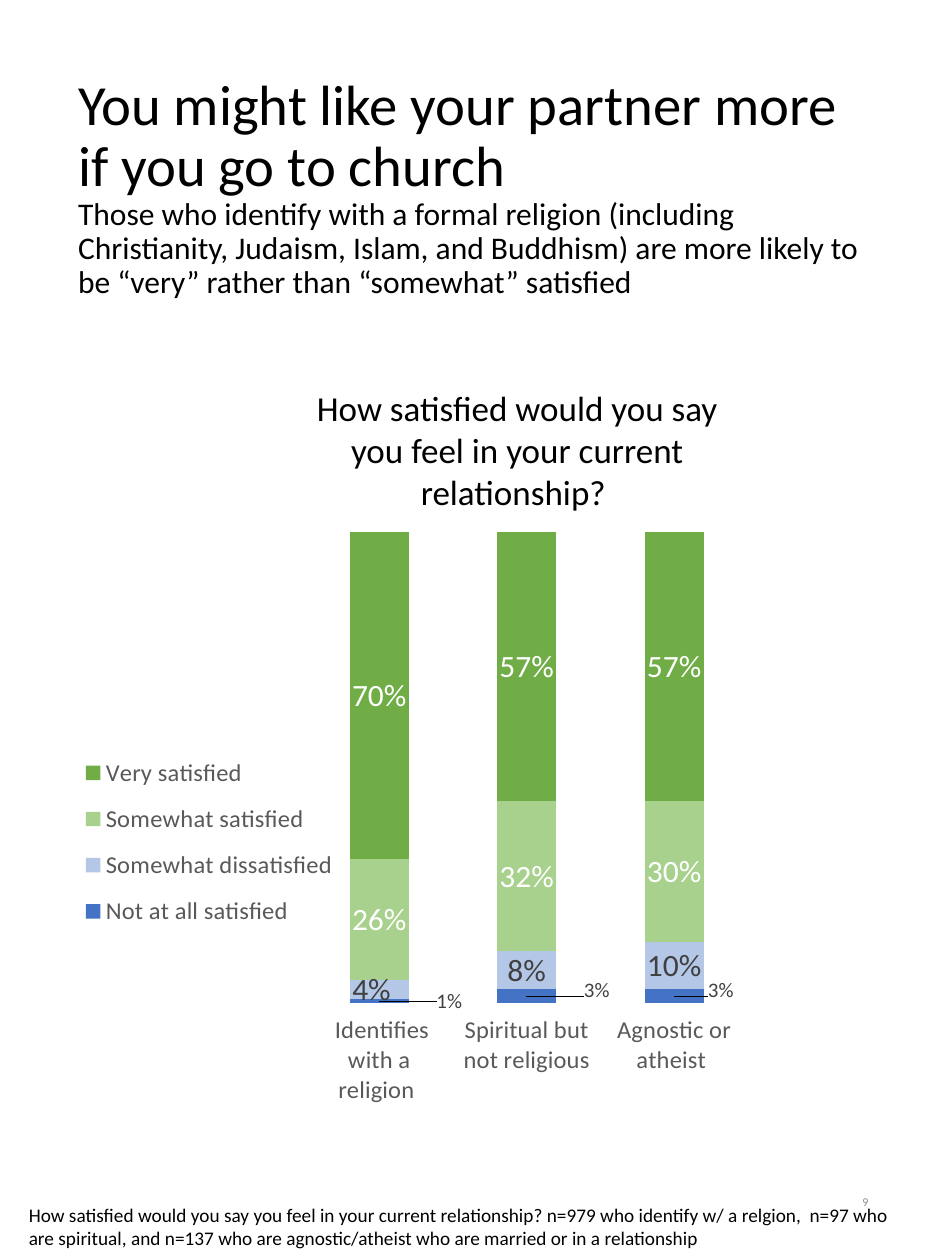
import pptx
import pptx.util
import pptx.chart.data
import pptx.dml.color
import pptx.enum.chart
import pptx.enum.text
import pptx.oxml
import pptx.oxml.ns

WIDTH, HEIGHT = 7.5, 10
FONT = "Calibri"
ALIGN = pptx.enum.text.PP_ALIGN
ANCHOR = pptx.enum.text.MSO_ANCHOR

QUESTION = "How satisfied would you say you feel in your current relationship?"
GROUPS = [" Identifies with a religion ", "Spiritual but not religious", "Agnostic or atheist "]
ANSWERS = [
    ("Not at all satisfied", (0.01, 0.03, 0.03), "4472C4", 12, "404040"),
    ("Somewhat dissatisfied", (0.04, 0.08, 0.1), "B4C7E7", 18, "404040"),
    ("Somewhat satisfied", (0.26, 0.32, 0.3), "A9D18E", 18, "FFFFFF"),
    ("Very satisfied", (0.7, 0.57, 0.57), "70AD47", 18, "FFFFFF"),
]
LABEL_SHIFTS = {
    (0, 0): (0.09, 0),
    (0, 1): (0.09, -0.01),
    (0, 2): (0.06, -0.01),
    (1, 0): (-0.01, 0),
}


def color(value):
    return pptx.dml.color.RGBColor.from_string(value)


def frame(left, top, width, height):
    column, row = WIDTH / 100, HEIGHT / 100
    return [pptx.util.Inches(n) for n in (left * column, top * row, width * column, height * row)]


def style(font, size, shade):
    font.name = FONT
    font.size = pptx.util.Pt(size)
    font.color.rgb = color(shade)


def add_heading(slide, headline, summary, area):
    heading = slide.shapes.title
    heading.left, heading.top, heading.width, heading.height = area
    text = heading.text_frame
    text.auto_size = pptx.enum.text.MSO_AUTO_SIZE.NONE
    text.vertical_anchor = ANCHOR.MIDDLE
    paragraph = text.paragraphs[0]
    paragraph.alignment = ALIGN.LEFT
    paragraph.line_spacing = 0.9
    paragraph.add_run().text = headline
    paragraph.add_line_break()
    detail = paragraph.add_run()
    detail.text = summary
    style(paragraph.font, 32.4, "000000")
    detail.font.size = pptx.util.Pt(18)


def add_text(slide, words, area, size, shade="000000", align=ALIGN.LEFT, anchor=ANCHOR.TOP):
    text = slide.shapes.add_textbox(*area).text_frame
    text.word_wrap = True
    text.vertical_anchor = anchor
    paragraph = text.paragraphs[0]
    paragraph.text = words
    paragraph.alignment = align
    style(paragraph.font, size, shade)


def place(element, position, target="", modes="", **values):
    for old in element.findall(pptx.oxml.ns.qn("c:layout")):
        element.remove(old)
    inner = f'<c:layoutTarget val="{target}"/>' if target else ""
    inner += "".join(f'<c:{axis}Mode val="edge"/>' for axis in modes)
    inner += "".join(f'<c:{key} val="{value}"/>' for key, value in values.items())
    namespace = pptx.oxml.ns.nsdecls("c")
    element.insert(position, pptx.oxml.parse_xml(
        f"<c:layout {namespace}><c:manualLayout>{inner}</c:manualLayout></c:layout>"))


def format_answer(series, answer, fill, size, shade):
    series.format.fill.solid()
    series.format.fill.fore_color.rgb = color(fill)
    labels = series.data_labels
    labels.show_value = True
    labels.number_format = "0%"
    labels.number_format_is_linked = False
    style(labels.font, size, shade)
    for (owner, group), (across, down) in LABEL_SHIFTS.items():
        if owner == answer:
            label = series.points[group].data_label
            style(label.font, size, shade)
            entry = labels._element.findall(pptx.oxml.ns.qn("c:dLbl"))[-1]
            place(entry, 1, x=across, y=down)


def add_satisfaction_chart(slide, area):
    data = pptx.chart.data.CategoryChartData(number_format="0%")
    data.categories = GROUPS
    for name, shares, *_ in ANSWERS:
        data.add_series(name, shares)
    kind = pptx.enum.chart.XL_CHART_TYPE.COLUMN_STACKED_100
    chart = slide.shapes.add_chart(kind, *area, data).chart
    chart.has_title = False
    style(chart.font, 10, "000000")

    plot = chart.plots[0]
    plot.gap_width, plot.overlap = 150, 100
    plot.vary_by_categories = False
    for answer, (series, (_, _, *look)) in enumerate(zip(plot.series, ANSWERS)):
        format_answer(series, answer, *look)

    chart.value_axis.visible = False
    chart.value_axis.has_major_gridlines = False
    chart.value_axis.maximum_scale = 1
    chart.category_axis.format.line.fill.background()
    style(chart.category_axis.tick_labels.font, 14, "595959")

    chart.has_legend = True
    legend = chart.legend
    legend.position = pptx.enum.chart.XL_LEGEND_POSITION.LEFT
    legend.include_in_layout = False
    style(legend.font, 14, "595959")
    place(legend._element, 1, modes="xy", x=0.04, y=0.4, w=0.36, h=0.34)
    plot_area = chart._chartSpace.chart.plotArea
    place(plot_area, 0, target="inner", modes="xy", x=0.344, y=0.045, w=0.568, h=0.798)


def main():
    deck = pptx.Presentation()
    deck.slide_width = pptx.util.Inches(WIDTH)
    deck.slide_height = pptx.util.Inches(HEIGHT)
    slide = deck.slides.add_slide(deck.slide_layouts[5])
    add_heading(
        slide,
        "You might like your partner more if you go to church",
        "Those who identify with a formal religion (including Christianity, Judaism, Islam, "
        "and Buddhism) are more likely to be “very” rather than “somewhat” satisfied",
        frame(6.93, 5.3, 86.27, 19.3))
    add_text(slide, "9", frame(70.67, 92.7, 22.53, 5.3), 6.8, "8C8C8C", ALIGN.RIGHT, ANCHOR.MIDDLE)
    add_satisfaction_chart(slide, frame(4, 40.1, 82.4, 47.6))
    add_text(
        slide,
        QUESTION + " n=979 who identify w/ a relgion,  n=97 who are spiritual, "
        "and n=137 who are agnostic/atheist who are married or in a relationship",
        frame(1.73, 95, 95.07, 4.7), 11)
    add_text(slide, QUESTION + " ", frame(29.73, 30.2, 50, 11.1), 20, align=ALIGN.CENTER)
    deck.save("out.pptx")


if __name__ == "__main__":
    main()
